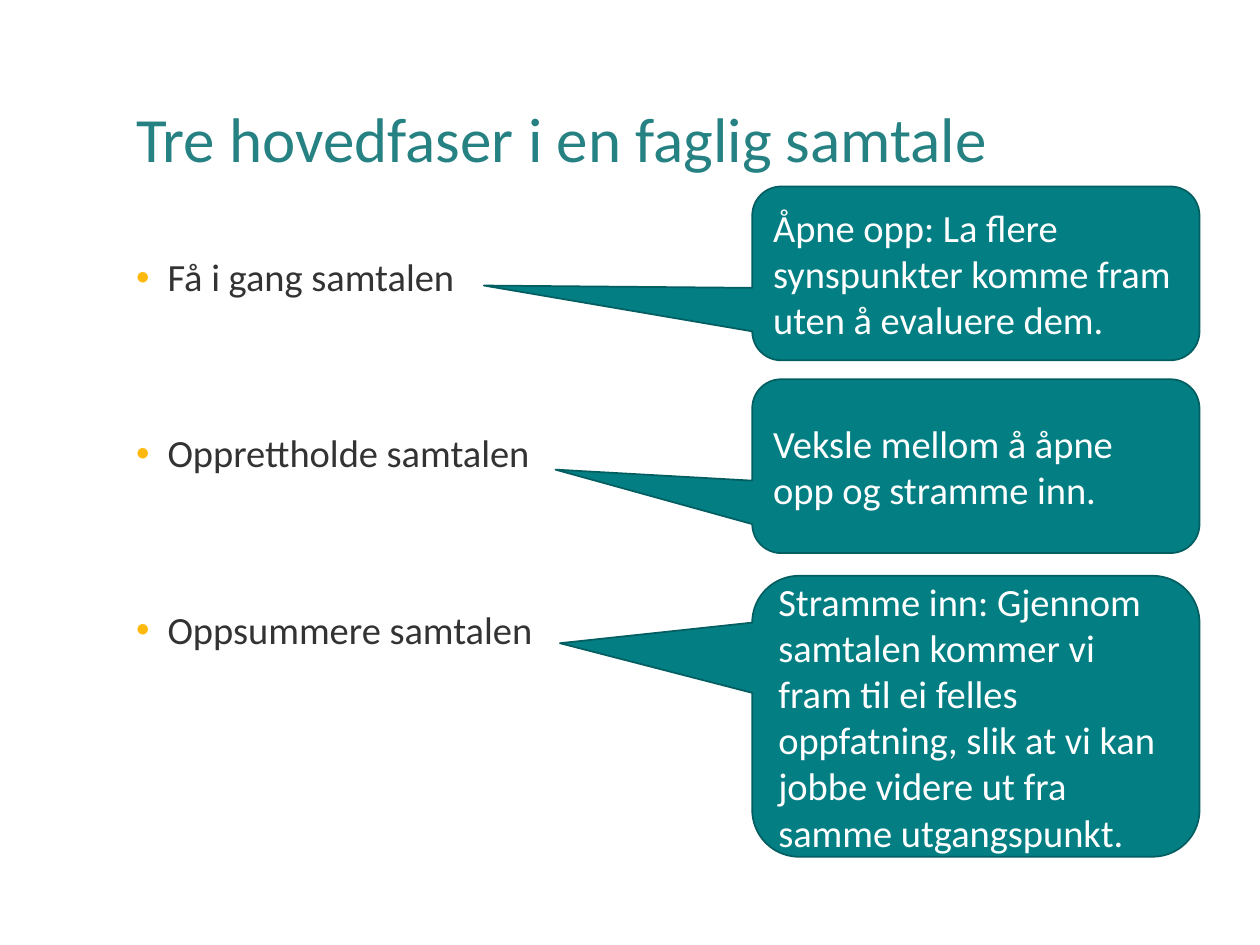
from lxml import etree
from pptx import Presentation
from pptx.dml.color import RGBColor
from pptx.enum.shapes import MSO_SHAPE
from pptx.enum.text import MSO_ANCHOR, MSO_AUTO_SIZE, PP_ALIGN
from pptx.oxml.ns import qn
from pptx.util import Inches, Pt

CALLOUT = MSO_SHAPE.ROUNDED_RECTANGULAR_CALLOUT
MIDDLE, TOP = MSO_ANCHOR.MIDDLE, MSO_ANCHOR.TOP
LEFT = PP_ALIGN.LEFT
NO_FIT = MSO_AUTO_SIZE.NONE

# Content
TITLE = "Tre hovedfaser i en faglig samtale"
# phase, explanation, callout top, callout height, pointer (share of callout size)
PHASES = [
    ("Få i gang samtalen",
     "Åpne opp: La flere synspunkter komme fram uten å evaluere dem.",
     1.48, 1.38, (-1.1, 0.07)),
    ("Opprettholde samtalen",
     "Veksle mellom å åpne opp og stramme inn.",
     3.01, 1.38, (-0.94, 0.02)),
    ("Oppsummere samtalen",
     "Stramme inn: Gjennom samtalen kommer vi fram til ei felles oppfatning, "
     "slik at vi kan jobbe videre ut fra samme utgangspunkt.",
     4.57, 2.23, (-0.93, -0.26)),
]
COLORS = {"title": "268183", "text": "333333", "bullet": "FDB90C",
          "fill": "037F83", "line": "025E61", "white": "FFFFFF"}
FONT = "Calibri"
TEXT_LEFT, TEXT_WIDTH = 0.98, 8.29
CALLOUT_LEFT, CALLOUT_WIDTH = 5.97, 3.55
PHASE_GAP = 77  # points between phases


def rgb(name):
    return RGBColor.from_string(COLORS[name])


def place(sp, left, top, width, height):
    sp.left, sp.top, sp.width, sp.height = map(Inches, (left, top, width, height))


def setup_frame(tf, anchor):
    tf.word_wrap = True
    tf.auto_size = NO_FIT
    tf.vertical_anchor = anchor


def write(p, text, size, color):
    p.alignment = LEFT
    r = p.add_run()
    r.text = text
    r.font.name, r.font.size = FONT, Pt(size)
    r.font.color.rgb = rgb(color)


def add_bullet(p):
    pPr = p._p.get_or_add_pPr()
    pPr.set("marL", str(Inches(0.25)))
    pPr.set("indent", str(-Inches(0.25)))
    clr = etree.SubElement(pPr, qn("a:buClr"))
    etree.SubElement(clr, qn("a:srgbClr"), val=COLORS["bullet"])
    etree.SubElement(pPr, qn("a:buFont"), typeface="Arial")
    etree.SubElement(pPr, qn("a:buChar"), char="•")


prs = Presentation()
prs.slide_width, prs.slide_height = Inches(10), Inches(7.5)
s = prs.slides.add_slide(prs.slide_layouts[1])

# Title
title = s.shapes.title
place(title, TEXT_LEFT, 0.4, TEXT_WIDTH, 1.45)
setup_frame(title.text_frame, MIDDLE)
p = title.text_frame.paragraphs[0]
p.line_spacing = 0.9
write(p, TITLE, 36, "title")

# Phases as a bulleted list
body = s.placeholders[1]
place(body, TEXT_LEFT, 2, TEXT_WIDTH, 4.57)
tf = body.text_frame
setup_frame(tf, TOP)
for i, (phase, *_) in enumerate(PHASES):
    p = tf.add_paragraph() if i else tf.paragraphs[0]
    add_bullet(p)
    p.line_spacing = 0.9
    p.space_before = Pt(PHASE_GAP if i else 0)
    write(p, phase, 22, "text")

# Callouts pointing at the phases
for _, text, top, height, pointer in PHASES:
    sp = s.shapes.add_shape(CALLOUT, Inches(CALLOUT_LEFT), Inches(top),
                            Inches(CALLOUT_WIDTH), Inches(height))
    sp.shadow.inherit = False
    sp.adjustments[0], sp.adjustments[1] = pointer
    sp.fill.solid()
    sp.fill.fore_color.rgb = rgb("fill")
    sp.line.color.rgb = rgb("line")
    sp.line.width = Pt(1)
    setup_frame(sp.text_frame, MIDDLE)
    write(sp.text_frame.paragraphs[0], text, 22, "white")

prs.save("out.pptx")
